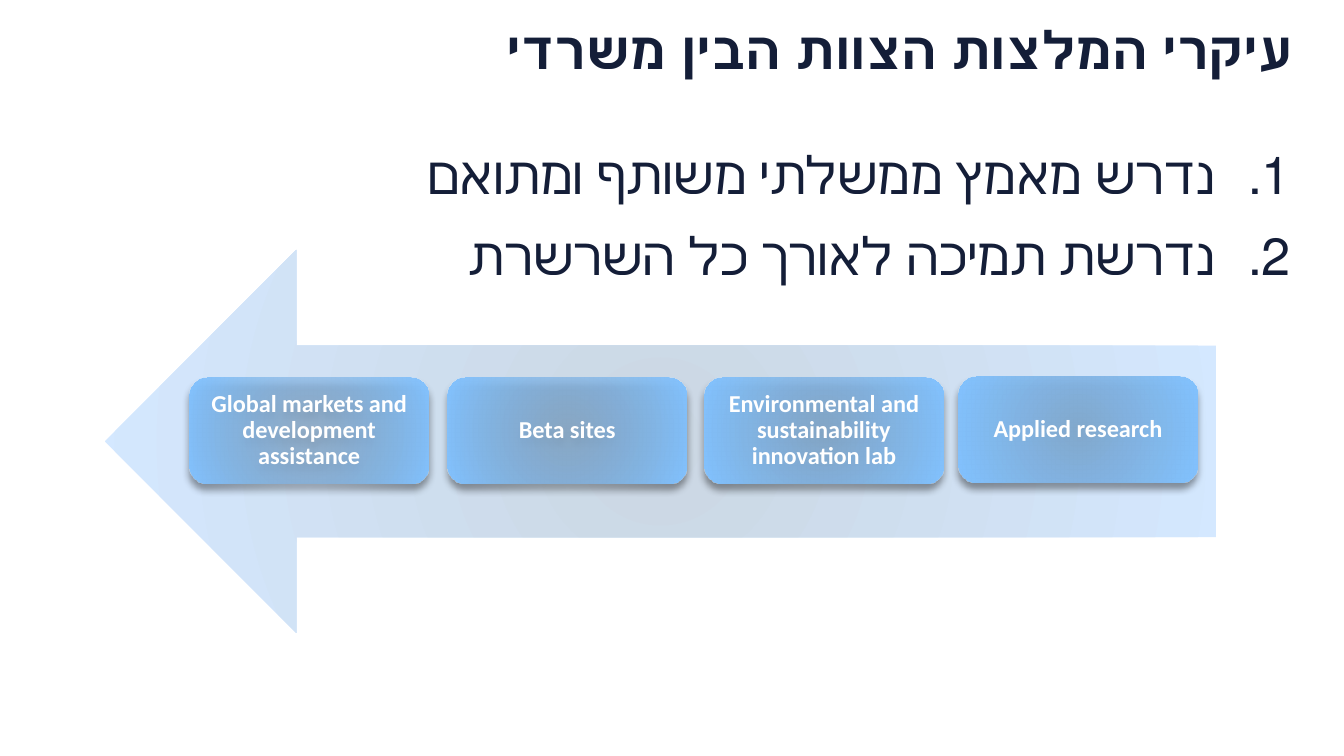
from dataclasses import dataclass

from pptx import Presentation
from pptx.dml.color import RGBColor
from pptx.enum.shapes import MSO_SHAPE
from pptx.enum.text import MSO_ANCHOR, MSO_AUTO_SIZE, PP_ALIGN
from pptx.oxml import parse_xml
from pptx.oxml.ns import nsdecls, qn
from pptx.util import Inches, Pt

LEFT_ARROW, ROUNDED = MSO_SHAPE.LEFT_ARROW, MSO_SHAPE.ROUNDED_RECTANGLE
MIDDLE, BOTTOM = MSO_ANCHOR.MIDDLE, MSO_ANCHOR.BOTTOM
CENTER, RIGHT = PP_ALIGN.CENTER, PP_ALIGN.RIGHT
NO_AUTOFIT = MSO_AUTO_SIZE.NONE


@dataclass(frozen=True)
class Theme:
    ink: str = "141E38"
    white: str = "FFFFFF"
    arrow_center: str = "CBD7E3"
    arrow_edge: str = "D4E8FF"
    stage_center: str = "82ACD3"
    stage_edge: str = "82C2FF"
    shadow: str = "000000"
    title_font: str = "Roboto"
    body_font: str = "Calibri"
    heading_size: int = 28
    stage_size: int = 13


THEME = Theme()


def style_paragraph(paragraph, align, name, size, color, bold):
    """Set alignment, right-to-left direction and font."""
    paragraph.alignment = align
    paragraph._p.get_or_add_pPr().set("rtl", "1")
    font = paragraph.font
    font.name, font.size, font.bold = name, Pt(size), bold
    font.color.rgb = RGBColor.from_string(color)


def fill_radial(shape, center, edge, center_alpha=100):
    """Fill from the centre outwards, without an outline."""
    shape.line.fill.background()
    shape.shadow.inherit = False
    gradient = parse_xml(
        f'<a:gradFill {nsdecls("a")} rotWithShape="1"><a:gsLst>'
        f'<a:gs pos="0"><a:srgbClr val="{center}">'
        f'<a:alpha val="{center_alpha * 1000}"/></a:srgbClr></a:gs>'
        f'<a:gs pos="100000"><a:srgbClr val="{edge}"/></a:gs></a:gsLst>'
        '<a:path path="circle"><a:fillToRect l="100000" t="100000" '
        'r="100000" b="100000"/></a:path></a:gradFill>')
    shape._element.spPr.find(qn("a:prstGeom")).addnext(gradient)


deck = Presentation()
deck.slide_width = Inches(10)
deck.slide_height = deck.slide_width * 9 // 16
page = deck.slides.add_slide(deck.slide_layouts[1])

title = page.shapes.title
title.left, title.top = Inches(1.1), Inches(0)
title.width, title.height = Inches(8.62), Inches(0.78)
title.text_frame.text = "עיקרי המלצות הצוות הבין משרדי"
title.text_frame.vertical_anchor = MIDDLE
title.text_frame.auto_size = NO_AUTOFIT
heading = title.text_frame.paragraphs[0]
heading.line_spacing = 0.9
style_paragraph(heading, RIGHT, THEME.title_font, THEME.heading_size, THEME.ink, True)

body = page.placeholders[1]
body.left, body.top = Inches(1.1), Inches(0.92)
body.width, body.height = Inches(8.6), Inches(1.26)
body.text_frame.text = "נדרש מאמץ ממשלתי משותף ומתואם\nנדרשת תמיכה לאורך כל השרשרת"
body.text_frame.vertical_anchor = BOTTOM
body.text_frame.auto_size = NO_AUTOFIT
for index, point in enumerate(body.text_frame.paragraphs):
    point.space_before = Pt(10 if index else 0)
    properties = point._p.get_or_add_pPr()
    properties.set("marR", "0")
    properties.set("marL", str(Inches(0.56)))
    properties.set("indent", str(-Inches(0.56)))
    properties.append(parse_xml(
        f'<a:buAutoNum {nsdecls("a")} type="arabicPeriod"/>'))
    style_paragraph(point, RIGHT, THEME.body_font, THEME.heading_size, THEME.ink, False)

arrow = page.shapes.add_shape(
    LEFT_ARROW, Inches(0.78), Inches(1.86), Inches(8.27), Inches(2.85))
fill_radial(arrow, THEME.arrow_center, THEME.arrow_edge)

# Stages run from right to left: label, left, top, opacity at the centre
stages = [
    ("Applied research", 7.13, 2.8, 90),
    ("Environmental and sustainability innovation lab", 5.24, 2.81, 77),
    ("Beta sites", 3.33, 2.81, 63),
    ("Global markets and development assistance", 1.41, 2.81, 50),
]
for label, left, top, opacity in stages:
    stage = page.shapes.add_shape(
        ROUNDED, Inches(left), Inches(top), Inches(1.78), Inches(0.79))
    fill_radial(stage, THEME.stage_center, THEME.stage_edge, opacity)
    stage._element.spPr.find(qn("a:effectLst")).append(parse_xml(
        f'<a:outerShdw {nsdecls("a")} blurRad="{Pt(4)}" dist="{Pt(3.4)}" '
        f'dir="5400000" rotWithShape="0"><a:srgbClr val="{THEME.shadow}">'
        '<a:alpha val="40000"/></a:srgbClr></a:outerShdw>'))
    frame = stage.text_frame
    frame.word_wrap = True
    frame.vertical_anchor = MIDDLE
    frame.margin_left = frame.margin_right = Inches(0.05)
    frame.margin_top = frame.margin_bottom = Inches(0.05)
    frame.text = label
    caption = frame.paragraphs[0]
    caption.line_spacing = 0.9
    style_paragraph(caption, CENTER, THEME.body_font, THEME.stage_size, THEME.white, True)

deck.save("out.pptx")
